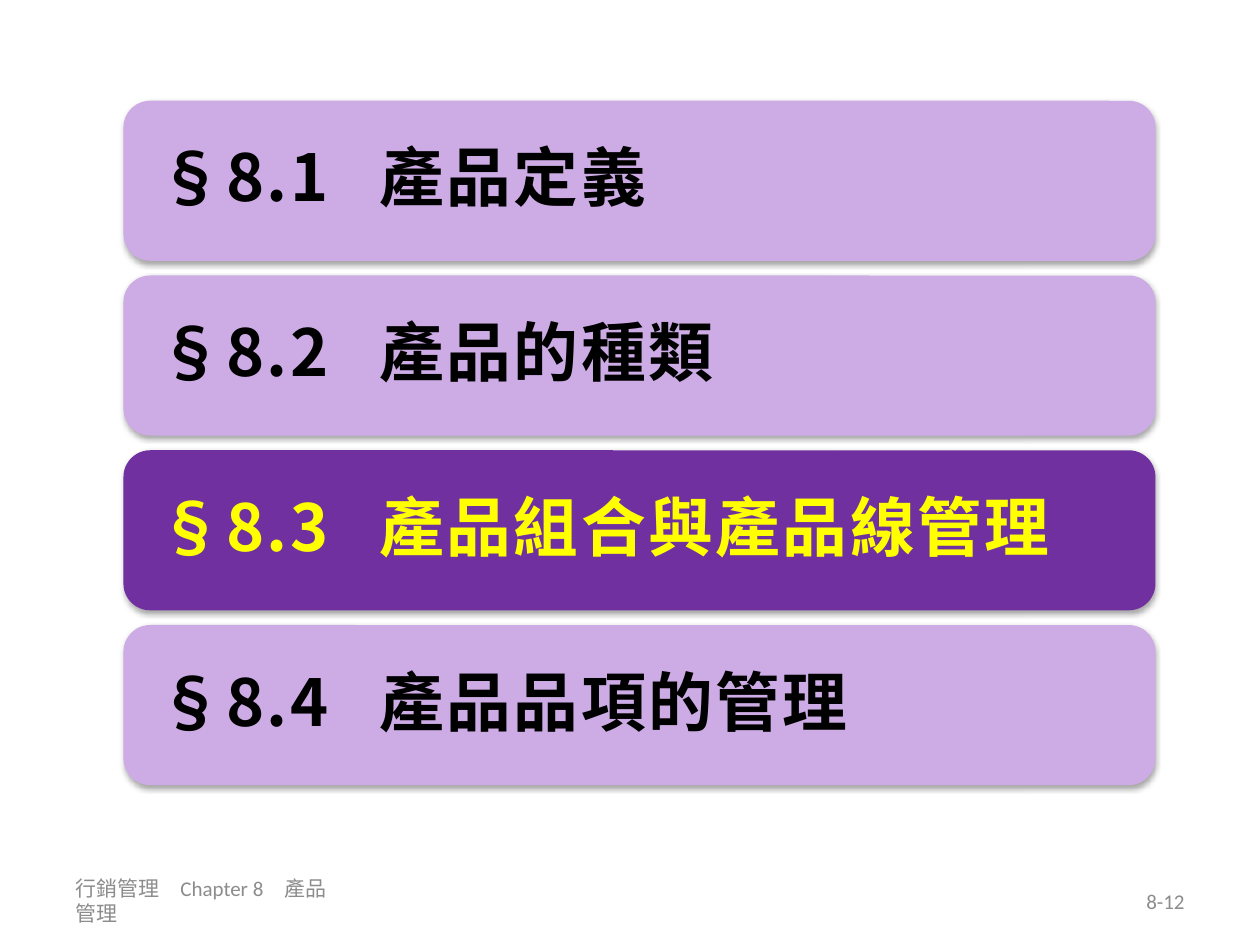
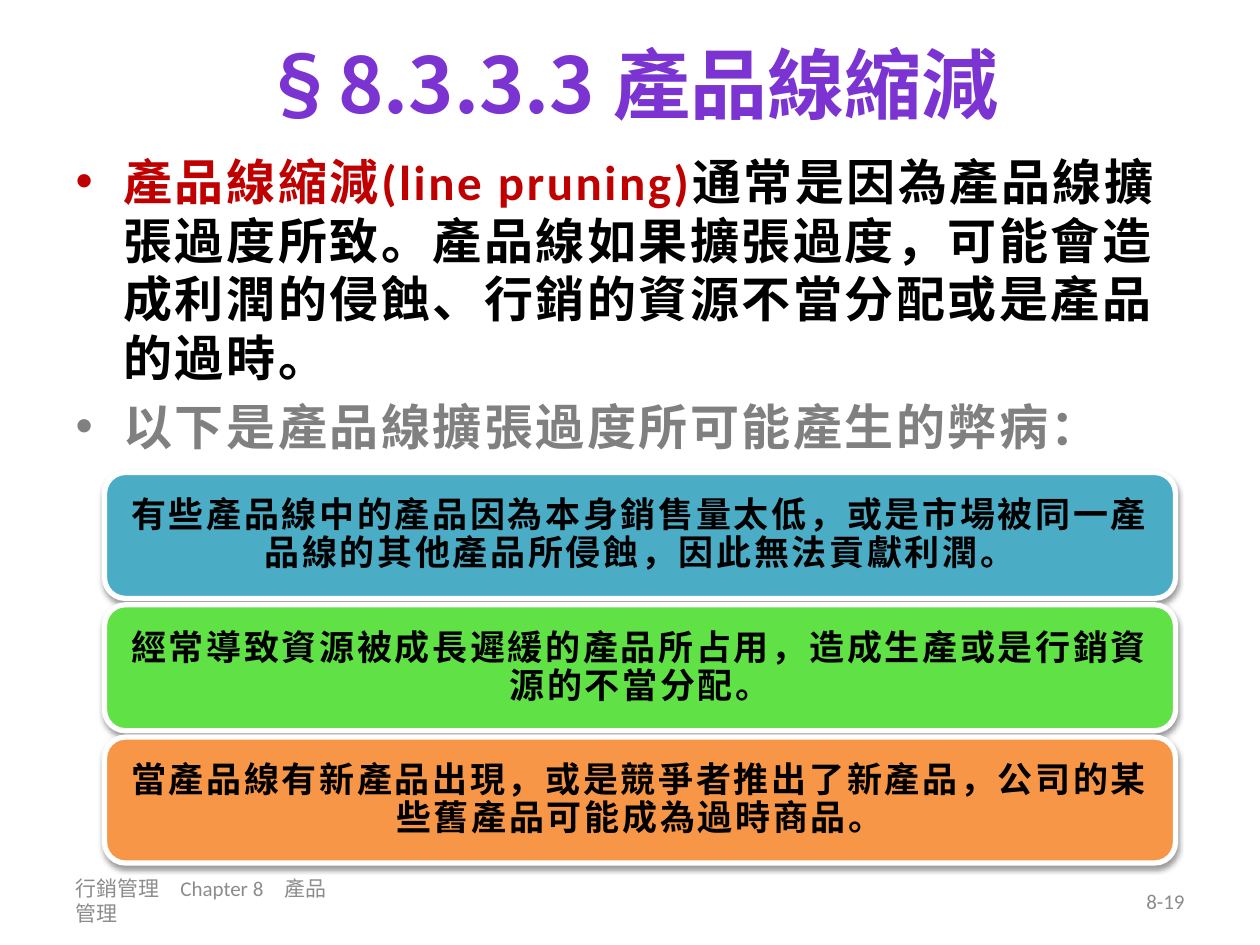
from lxml.etree import SubElement
from pptx import Presentation
from pptx.dml.color import RGBColor
from pptx.enum.shapes import MSO_SHAPE
from pptx.enum.text import MSO_ANCHOR, MSO_AUTO_SIZE, PP_ALIGN
from pptx.oxml.ns import qn
from pptx.util import Inches, Pt

# Shared colours and fonts
BLACK = RGBColor(0x00, 0x00, 0x00)
WHITE = RGBColor(0xFF, 0xFF, 0xFF)
GRAY = RGBColor(0x80, 0x80, 0x80)
FOOTER_GRAY = RGBColor(0x8C, 0x8C, 0x8C)
RED = RGBColor(0xC0, 0x00, 0x00)
YELLOW = RGBColor(0xFF, 0xFF, 0x00)
TITLE_PURPLE = RGBColor(0x7B, 0x34, 0xD2)
PURPLE = RGBColor(0x70, 0x30, 0xA0)
LILAC = RGBColor(0xCD, 0xAC, 0xE6)
BLUE = RGBColor(0x4B, 0xAC, 0xC6)
GREEN = RGBColor(0x60, 0xE1, 0x46)
ORANGE = RGBColor(0xF7, 0x96, 0x46)
LATIN_FONT = "Calibri"
CJK_FONT = "Noto Sans CJK SC"

FOOTER_TEXT = "行銷管理　Chapter 8　產品管理"


def add_text(paragraph, text, size=28, color=BLACK, font=LATIN_FONT, bold=True, spacing=1.5):
    """Add one formatted run; spacing is the letter spacing in points."""
    run = paragraph.add_run()
    run.text = text
    run.font.size = Pt(size)
    run.font.bold = bold
    run.font.color.rgb = color
    run.font.name = font
    properties = run.font._element
    properties.set("spc", str(int(spacing * 100)))
    east_asian = SubElement(properties, qn("a:ea"))
    east_asian.set("typeface", CJK_FONT)


def set_hanging_bullet(paragraph, indent):
    properties = paragraph._p.get_or_add_pPr()
    properties.set("marL", str(indent))
    properties.set("indent", str(-indent))
    SubElement(properties, qn("a:buChar")).set("char", "•")


def set_tab(paragraph, position):
    tabs = SubElement(paragraph._p.get_or_add_pPr(), qn("a:tabLst"))
    tab = SubElement(tabs, qn("a:tab"))
    tab.set("pos", str(position))
    tab.set("algn", "l")


def add_shadow(shape, opacity):
    shape.shadow.inherit = False
    effects = shape._element.spPr.find(qn("a:effectLst"))
    shadow = SubElement(effects, qn("a:outerShdw"), blurRad=str(Pt(3.1)),
                        dist=str(Pt(1.7)), dir="5400000", rotWithShape="0")
    color = SubElement(shadow, qn("a:srgbClr"), val="000000")
    SubElement(color, qn("a:alpha"), val=str(opacity * 1000))


class Deck:
    """Holds the presentation, its style and the current slide."""

    def __init__(self):
        self.presentation = Presentation()
        self.presentation.slide_width = Inches(10)
        self.presentation.slide_height = Inches(7.5)
        self.slide = None

    def add_slide(self, layout, number):
        self.slide = self.presentation.slides.add_slide(self.presentation.slide_layouts[layout])
        self.add_footer(0.5, FOOTER_TEXT, PP_ALIGN.LEFT)
        self.add_footer(7.17, number, PP_ALIGN.RIGHT)

    def add_footer(self, left, text, alignment):
        box = self.slide.shapes.add_textbox(Inches(left), Inches(6.95), Inches(2.33), Inches(0.4))
        frame = box.text_frame
        frame.word_wrap = True
        frame.vertical_anchor = MSO_ANCHOR.MIDDLE
        frame.paragraphs[0].alignment = alignment
        add_text(frame.paragraphs[0], text, size=12, color=FOOTER_GRAY, bold=False, spacing=0)

    def place(self, shape, left, top, width, height):
        shape.left, shape.top = Inches(left), Inches(top)
        shape.width, shape.height = Inches(width), Inches(height)
        shape.text_frame.auto_size = MSO_AUTO_SIZE.NONE
        return shape.text_frame

    def add_title(self, text):
        frame = self.place(self.slide.shapes.title, 0.5, 0, 9, 1.31)
        frame.vertical_anchor = MSO_ANCHOR.MIDDLE
        paragraph = frame.paragraphs[0]
        paragraph.alignment = PP_ALIGN.CENTER
        add_text(paragraph, text, size=44, color=TITLE_PURPLE, font=CJK_FONT, spacing=0)

    def add_list(self, items):
        """Each item is a list of (text, color) pairs."""
        frame = self.place(self.slide.placeholders[1], 0.5, 1.15, 9, 3.23)
        for index, item in enumerate(items):
            paragraph = frame.add_paragraph() if index else frame.paragraphs[0]
            set_hanging_bullet(paragraph, Inches(0.38))
            paragraph.space_before = Pt(5.6 if index else 0)
            for text, color in item:
                add_text(paragraph, text, color=color)

    def add_panel(self, left, top, width, height, fill, inset, opacity, outline=None):
        """Add a rounded panel and return its paragraph."""
        panel = self.slide.shapes.add_shape(MSO_SHAPE.ROUNDED_RECTANGLE, Inches(left),
                                            Inches(top), Inches(width), Inches(height))
        panel.fill.solid()
        panel.fill.fore_color.rgb = fill
        if outline is None:
            panel.line.fill.background()
        else:
            panel.line.color.rgb = outline
            panel.line.width = Pt(3)
        add_shadow(panel, opacity)
        frame = panel.text_frame
        frame.word_wrap = True
        frame.vertical_anchor = MSO_ANCHOR.MIDDLE
        frame.margin_left = frame.margin_right = Inches(inset)
        frame.margin_top = frame.margin_bottom = Inches(0.08)
        paragraph = frame.paragraphs[0]
        paragraph.line_spacing = 0.9
        return paragraph

    def add_section(self, top, number, name, current):
        paragraph = self.add_panel(0.98, top, 8.19, 1.27, PURPLE if current else LILAC, 0.22, 35)
        paragraph.alignment = PP_ALIGN.LEFT
        set_tab(paragraph, Inches(1.75))
        add_text(paragraph, f"§{number}\t{name}", size=37, font=CJK_FONT,
                 color=YELLOW if current else BLACK)

    def add_drawback(self, top, text, fill):
        paragraph = self.add_panel(0.83, top, 8.5, 1, fill, 0.13, 38, outline=WHITE)
        paragraph.alignment = PP_ALIGN.CENTER
        add_text(paragraph, text, size=20)


def main():
    deck = Deck()

    # Chapter outline
    deck.add_slide(6, "8-12")
    sections = ["產品定義", "產品的種類", "產品組合與產品線管理", "產品品項的管理"]
    for index, name in enumerate(sections):
        deck.add_section(0.8 + index * 1.387, f"8.{index + 1}", name, current=index == 2)

    # Product line pruning
    deck.add_slide(1, "8-19")
    deck.add_title("§8.3.3.3 產品線縮減")
    deck.add_list([
        [("產品線縮減(line pruning)", RED),
         ("通常是因為產品線擴張過度所致。產品線如果擴張過度，可能會造成利潤的侵蝕、"
          "行銷的資源不當分配或是產品的過時。", BLACK)],
        [("以下是產品線擴張過度所可能產生的弊病：", GRAY)],
    ])
    drawbacks = [
        ("有些產品線中的產品因為本身銷售量太低，或是市場被同一產品線的其他產品所侵蝕，"
         "因此無法貢獻利潤。", BLUE),
        ("經常導致資源被成長遲緩的產品所占用，造成生產或是行銷資源的不當分配。", GREEN),
        ("當產品線有新產品出現，或是競爭者推出了新產品，公司的某些舊產品可能成為過時商品。",
         ORANGE),
    ]
    for index, (text, fill) in enumerate(drawbacks):
        deck.add_drawback(3.75 + index * 1.05, text, fill)

    deck.presentation.save("out.pptx")


if __name__ == "__main__":
    main()
